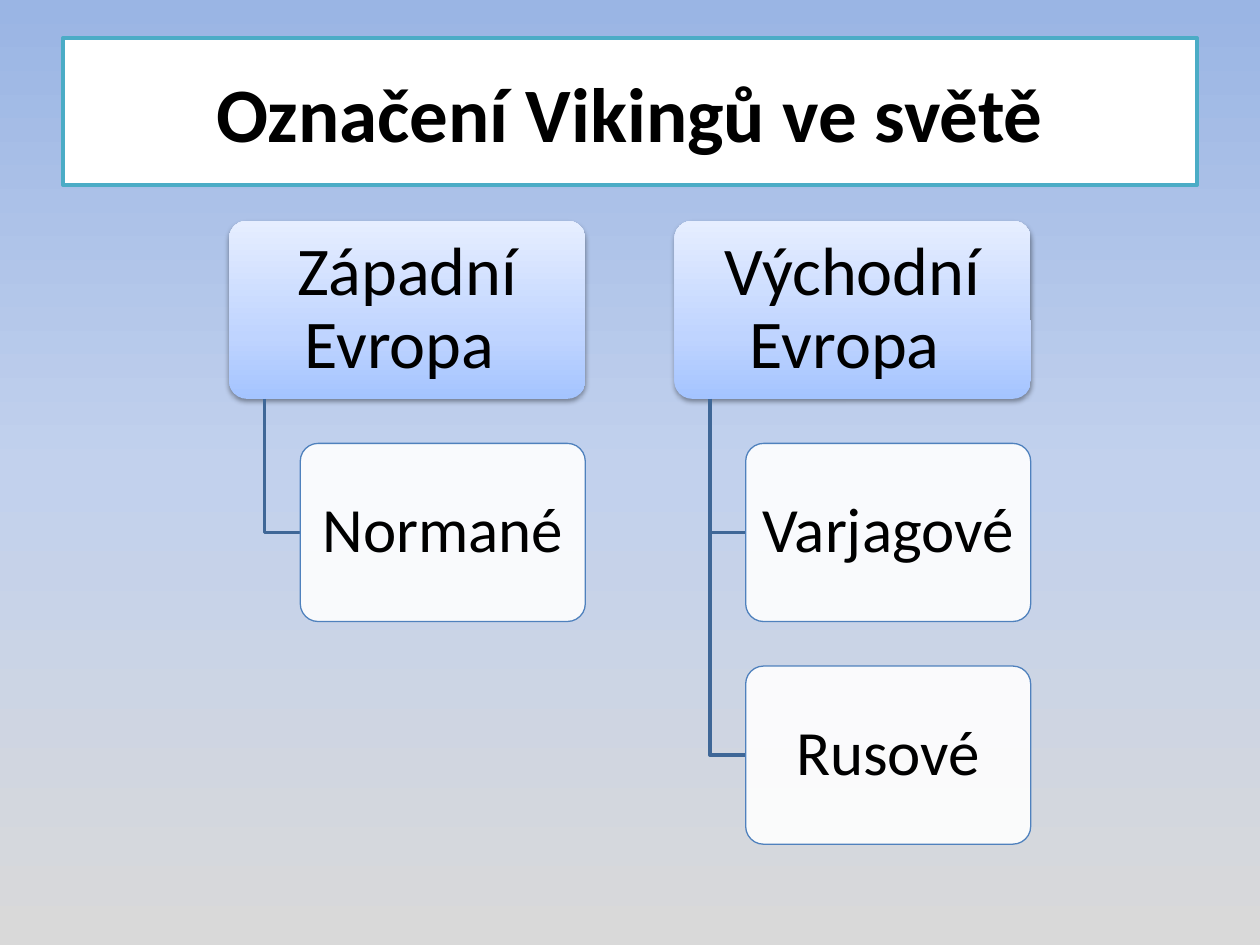
"""Build a slide with a two-column hierarchy of names for the Vikings."""
from lxml.etree import SubElement
from pptx import Presentation
from pptx.dml.color import RGBColor
from pptx.enum.shapes import MSO_SHAPE
from pptx.enum.text import MSO_ANCHOR, PP_ALIGN
from pptx.oxml.ns import qn
from pptx.util import Pt

BLACK = RGBColor(0x00, 0x00, 0x00)
WHITE = RGBColor(0xFF, 0xFF, 0xFF)
TEAL = RGBColor(0x4B, 0xAC, 0xC6)
BLUE = RGBColor(0x4F, 0x81, 0xBD)
BRANCH_BLUE = RGBColor(0x3F, 0x67, 0x97)
SKY = ((0, RGBColor(0x9A, 0xB5, 0xE4)), (50, RGBColor(0xC2, 0xD1, 0xED)),
       (100, RGBColor(0xD9, 0xD9, 0xD9)))
REGION = ((0, RGBColor(0xA4, 0xC4, 0xFF)), (35, RGBColor(0xBF, 0xD4, 0xFF)),
          (100, RGBColor(0xE6, 0xEE, 0xFF)))

LEFT, TOP, UNIT = 130.9, 126.1, 101.8
ROW_STEP, COLUMN_STEP = 1.25 * UNIT, 2.5 * UNIT
TRUNK, INDENT = 0.2 * UNIT, 0.4 * UNIT
REGIONS = (("Západní Evropa ", ("Normané",)),
           ("Východní Evropa ", ("Varjagové", "Rusové")))


class Slide:
    def __init__(self, page, font_name="Calibri"):
        self.page = page
        self.font_name = font_name

    def gradient(self, fill, element, stops, angle):
        fill.gradient()
        fill.gradient_angle = angle
        stop_list = element.find(".//" + qn("a:gsLst"))
        stop_list.clear()
        for position, color in stops:
            stop = SubElement(stop_list, qn("a:gs"), pos=str(position * 1000))
            SubElement(stop, qn("a:srgbClr"), val=str(color))

    def background(self, stops):
        self.gradient(self.page.background.fill, self.page.element, stops, 270)

    def box(self, text, left, top, width, height, size, kind=MSO_SHAPE.ROUNDED_RECTANGLE,
            line=None, line_width=0.75, bold=False, spacing=0.9, inset=5.4):
        box = self.page.shapes.add_shape(kind, Pt(left), Pt(top), Pt(width), Pt(height))
        box.shadow.inherit = False
        box.fill.solid()
        box.fill.fore_color.rgb = WHITE
        if line is None:
            box.line.fill.background()
        else:
            box.line.color.rgb = line
            box.line.width = Pt(line_width)
        if kind == MSO_SHAPE.ROUNDED_RECTANGLE:
            box.adjustments[0] = 0.1
        frame = box.text_frame
        frame.word_wrap = True
        frame.vertical_anchor = MSO_ANCHOR.MIDDLE
        frame.margin_left = frame.margin_right = Pt(inset)
        frame.margin_top = frame.margin_bottom = Pt(3.6)
        para = frame.paragraphs[0]
        para.text = text
        para.alignment = PP_ALIGN.CENTER
        para.line_spacing = spacing
        para.font.name = self.font_name
        para.font.size = Pt(size)
        para.font.bold = bold
        para.font.color.rgb = BLACK
        return box

    def title(self, text):
        self.box(text, 36, 21.6, 648, 84.24, 44, kind=MSO_SHAPE.RECTANGLE,
                 line=TEAL, line_width=2, bold=True, spacing=1.0, inset=7.2)

    def region(self, text, left, top):
        box = self.box(text, left, top, 2 * UNIT, UNIT, 39)
        self.gradient(box.fill, box.element, REGION, 90)
        effects = box.element.spPr.find(qn("a:effectLst"))
        shadow = SubElement(effects, qn("a:outerShdw"), blurRad=str(Pt(3.1)),
                            dist=str(Pt(1.6)), dir="5400000", rotWithShape="0")
        color = SubElement(shadow, qn("a:srgbClr"), val=str(BLACK))
        SubElement(color, qn("a:alpha"), val="38000")

    def name(self, text, left, top):
        box = self.box(text, left, top, 1.6 * UNIT, UNIT, 36, line=BLUE)
        color = box.element.spPr.find(qn("a:solidFill")).find(qn("a:srgbClr"))
        SubElement(color, qn("a:alpha"), val="90000")

    def branch(self, left, top, right, bottom):
        builder = self.page.shapes.build_freeform(Pt(left), Pt(top))
        builder.add_line_segments([(Pt(left), Pt(bottom)), (Pt(right), Pt(bottom))], close=False)
        branch = builder.convert_to_shape()
        branch.shadow.inherit = False
        branch.fill.background()
        branch.line.color.rgb = BRANCH_BLUE
        branch.line.width = Pt(2)


def main():
    deck = Presentation()
    deck.slide_width, deck.slide_height = Pt(720), Pt(540)
    slide = Slide(deck.slides.add_slide(deck.slide_layouts[6]))
    slide.background(SKY)
    slide.title("Označení Vikingů ve světě")
    for column, (region, names) in enumerate(REGIONS):
        left = LEFT + column * COLUMN_STEP
        slide.region(region, left, TOP)
        for row, name in enumerate(names, start=1):
            top = TOP + row * ROW_STEP
            slide.branch(left + TRUNK, TOP + UNIT, left + INDENT, top + UNIT / 2)
            slide.name(name, left + INDENT, top)
    deck.save("out.pptx")


if __name__ == "__main__":
    main()
